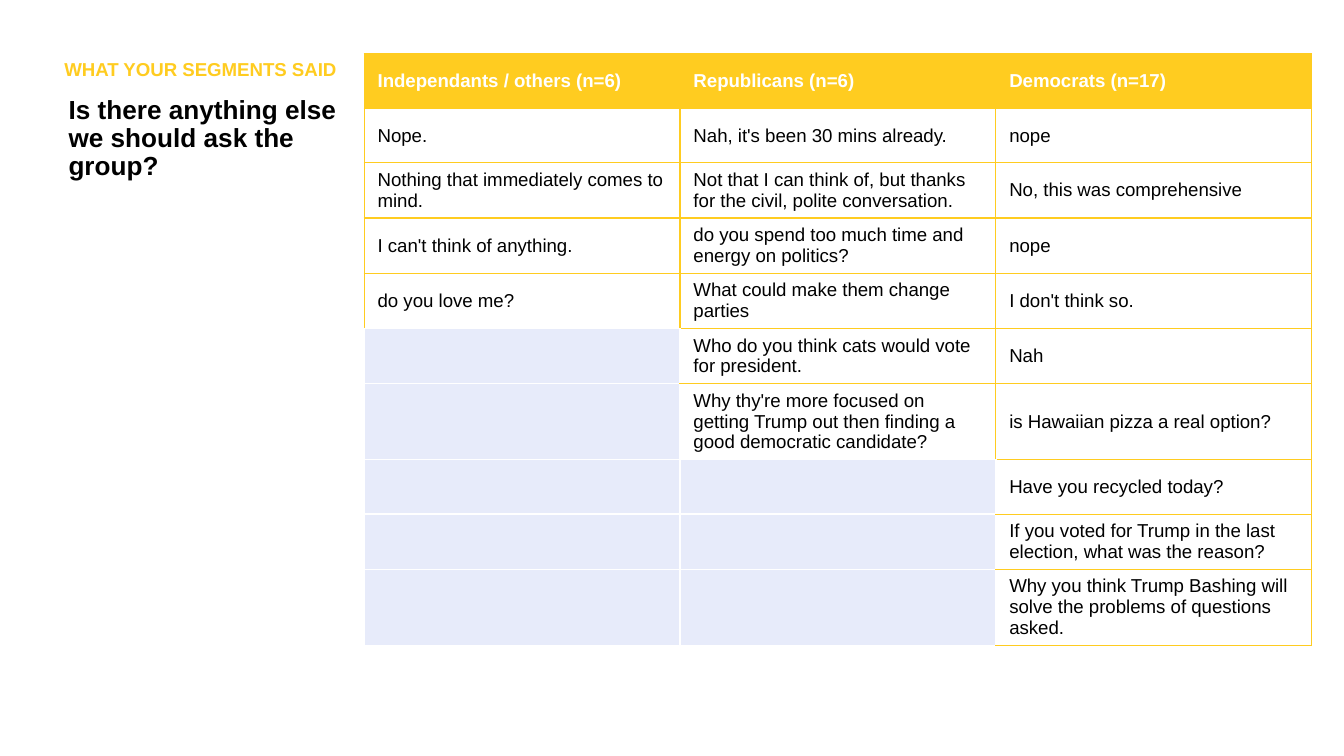
from lxml import etree
from pptx import Presentation
from pptx.dml.color import RGBColor
from pptx.enum.text import MSO_ANCHOR as Anchor, MSO_AUTO_SIZE as AutoSize, PP_ALIGN as Align
from pptx.oxml.ns import qn
from pptx.util import Inches, Pt

GOLD, WHITE, BLACK, PALE = "FFCC20", "FFFFFF", "000000", "E7EBFA"
SEGMENTS = {
    "Independants / others (n=6)": [
        "Nope.",
        "Nothing that immediately comes to mind.",
        "I can't think of anything.",
        "do you love me?",
    ],
    "Republicans (n=6)": [
        "Nah, it's been 30 mins already.",
        "Not that I can think of, but thanks for the civil, polite conversation.",
        "do you spend too much time and energy on politics?",
        "What could make them change parties",
        "Who do you think cats would vote for president.",
        "Why thy're more focused on getting Trump out then finding a good democratic candidate?",
    ],
    "Democrats (n=17)": [
        "nope",
        "No, this was comprehensive",
        "nope",
        "I don't think so.",
        "Nah",
        "is Hawaiian pizza a real option?",
        "Have you recycled today?",
        "If you voted for Trump in the last election, what was the reason?",
        "Why you think Trump Bashing will solve the problems of questions asked.",
    ],
}


def rgb(color):
    return RGBColor.from_string(color)


def write(frame, text, size, color, bold):
    frame.text = text
    paragraph = frame.paragraphs[0]
    font = paragraph.font
    font.name, font.size, font.bold = "Arial", Pt(size), bold
    font.color.rgb = rgb(color)
    return paragraph


def place_heading(shape, box, text, size, color):
    shape.left, shape.top, shape.width, shape.height = map(Inches, box)
    frame = shape.text_frame
    paragraph = write(frame, text, size, color, True)
    frame.word_wrap = True
    frame.auto_size = AutoSize.NONE
    frame.vertical_anchor = Anchor.TOP
    paragraph.alignment = Align.LEFT
    paragraph.line_spacing = 0.9
    paragraph.space_before = Pt(10)


def style_cell(cell, fill, border, width):
    properties = cell._tc.get_or_add_tcPr()
    for side in ("lnL", "lnR", "lnT", "lnB"):
        line = etree.SubElement(properties, qn(f"a:{side}"), w=str(Pt(width)))
        solid = etree.SubElement(line, qn("a:solidFill"))
        etree.SubElement(solid, qn("a:srgbClr"), val=border)
    cell.fill.solid()
    cell.fill.fore_color.rgb = rgb(fill)


def add_answers(slide, box, segments):
    row_count = 1 + max(map(len, segments.values()))
    answers = slide.shapes.add_table(row_count, len(segments), *map(Inches, box)).table
    for column, (segment, replies) in enumerate(segments.items()):
        entries = [segment, *replies]
        for row in range(row_count):
            cell = answers.cell(row, column)
            if row >= len(entries):
                style_cell(cell, PALE, WHITE, 1)
                continue
            header = row == 0
            style_cell(cell, GOLD if header else WHITE, GOLD, 0.75)
            write(cell.text_frame, entries[row], 10, WHITE if header else BLACK, header)
            cell.vertical_anchor = Anchor.MIDDLE


def main():
    deck = Presentation()
    deck.slide_width = Inches(10)
    deck.slide_height = deck.slide_width * 9 // 16
    slide = deck.slides.add_slide(deck.slide_layouts[5])
    place_heading(slide.shapes.title, (0.41, 0.67, 2.3, 4.41),
                  "Is there anything else we should ask the group?", 14, BLACK)
    kicker_box = (0.38, 0.4, 2.32, 0.28)
    kicker = slide.shapes.add_textbox(*map(Inches, kicker_box))
    place_heading(kicker, kicker_box, "WHAT YOUR SEGMENTS SAID", 10, GOLD)
    add_answers(slide, (2.71, 0.4, 7.05, 4.06), SEGMENTS)
    deck.save("out.pptx")


if __name__ == "__main__":
    main()
